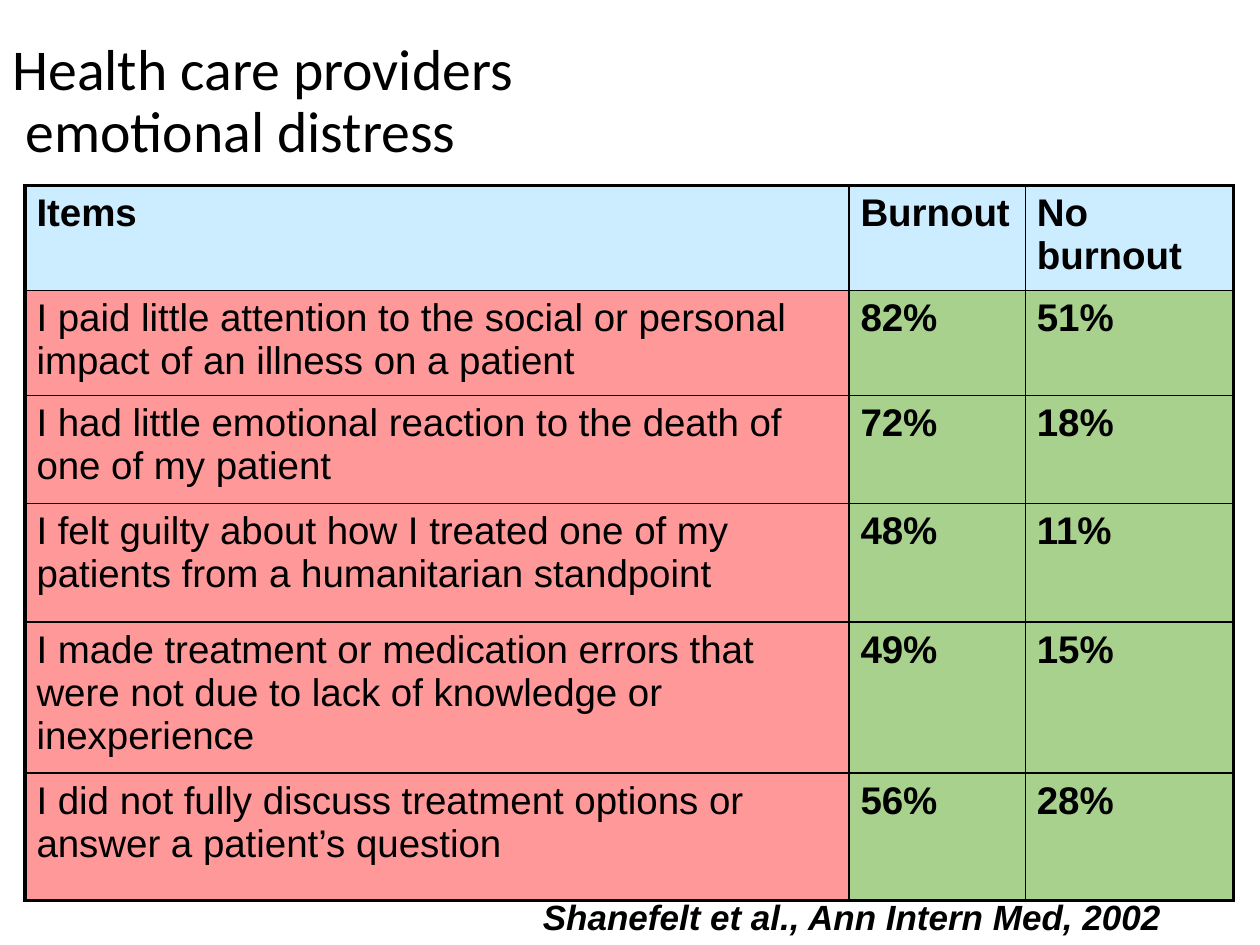
from lxml.etree import SubElement
from pptx import Presentation
from pptx.dml.color import RGBColor
from pptx.enum.text import MSO_ANCHOR as Anchor
from pptx.oxml.ns import qn
from pptx.util import Inches, Pt

WIDTH, HEIGHT = 10, 7.5
BLACK, BLUE, RED, GREEN = "000000", "CCECFF", "FF9999", "A9D18E"
THIN, THICK = 1, 2.25

COL_WIDTHS = [6.54, 1.4, 1.65]
ROW_HEIGHTS = [0.83, 0.79, 0.86, 0.94, 1.2, 1.01]
ROWS = [
    ("Items", "Burnout", "No burnout"),
    ("I paid little attention to the social or personal impact of an illness on a patient", "82%", "51%"),
    ("I had little emotional reaction to the death of one of my patient", "72%", "18%"),
    ("I felt guilty about how I treated one of my patients from a humanitarian standpoint", "48%", "11%"),
    ("I made treatment or medication errors that were not due to lack of knowledge or inexperience",
     "49%", "15%"),
    ("I did not fully discuss treatment options or answer a patient’s question", "56%", "28%"),
]


def color(value):
    return RGBColor.from_string(value)


class SlideBuilder:
    """Holds the text style and the current slide; places are shares of its size."""

    style = {"name": "Arial", "size": Pt(22), "bold": False, "italic": False}

    def __init__(self, prs):
        self.prs = prs
        self.s = prs.slides.add_slide(prs.slide_layouts[6])

    def box(self, x, y, w, h):
        pw, ph = self.prs.slide_width, self.prs.slide_height
        return [round(v) for v in (x * pw, y * ph, w * pw, h * ph)]

    def fill_text(self, tf, text, **changes):
        """Fill the first paragraph; a newline in the text is a line break."""
        p = tf.paragraphs[0]
        for i, line in enumerate(text.split("\n")):
            if i:
                p.add_line_break()
            r = p.add_run()
            r.text = line
            for key, value in {**self.style, **changes}.items():
                setattr(r.font, key, value)
            r.font.color.rgb = color(BLACK)
        return p

    def text(self, place, text, wrap=True, anchor=Anchor.TOP, spacing=1.0, **changes):
        tf = self.s.shapes.add_textbox(*self.box(*place)).text_frame
        tf.word_wrap, tf.vertical_anchor = wrap, anchor
        self.fill_text(tf, text, **changes).line_spacing = spacing

    def borders(self, cell, widths):
        tc_pr = cell._tc.get_or_add_tcPr()
        for side, width in widths.items():
            ln = SubElement(tc_pr, qn(f"a:ln{side}"), w=str(Pt(width)))
            fill = SubElement(ln, qn("a:solidFill"))
            SubElement(fill, qn("a:srgbClr"), val=BLACK)

    def table(self, place, rows, widths, heights):
        last_row, last_col = len(rows) - 1, len(widths) - 1
        table = self.s.shapes.add_table(len(rows), len(widths), *self.box(*place)).table
        for col, width in zip(table.columns, widths):
            col.width = Inches(width)
        for row, height in zip(table.rows, heights):
            row.height = Inches(height)
        for i, row in enumerate(rows):
            for j, text in enumerate(row):
                cell = table.cell(i, j)
                cell.margin_left = cell.margin_right = Inches(0.09)
                edges = {"L": j == 0, "R": j == last_col, "T": i == 0, "B": i == last_row}
                self.borders(cell, {k: THICK if outer else THIN for k, outer in edges.items()})
                cell.fill.solid()
                cell.fill.fore_color.rgb = color(BLUE if i == 0 else RED if j == 0 else GREEN)
                self.fill_text(cell.text_frame, text, bold=i == 0 or j > 0)


def main():
    prs = Presentation()
    prs.slide_width, prs.slide_height = Inches(WIDTH), Inches(HEIGHT)
    slide = SlideBuilder(prs)
    slide.text((0, 0.21 / HEIGHT, 1, 1.21 / HEIGHT), "Health care providers\n emotional distress",
               anchor=Anchor.MIDDLE, spacing=0.9, name="Calibri", size=Pt(33))
    slide.table((0.02, 1.47 / HEIGHT, 0.96, 5.63 / HEIGHT), ROWS, COL_WIDTHS, ROW_HEIGHTS)
    slide.text((0.421, 7.06 / HEIGHT, 0.522, 0.44 / HEIGHT), "Shanefelt et al., Ann Intern Med, 2002",
               wrap=False, size=Pt(20), bold=True, italic=True)
    prs.save("out.pptx")


if __name__ == "__main__":
    main()
